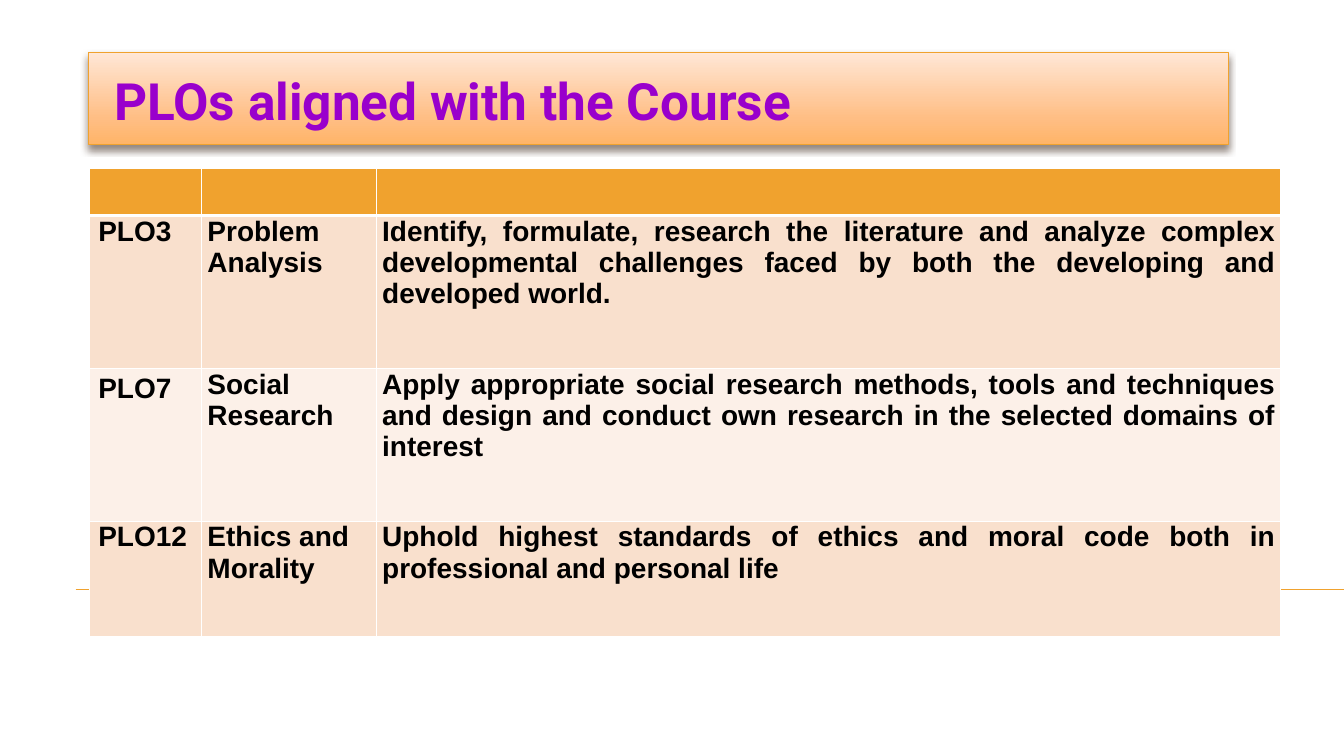
import pptx
import pptx.util
import pptx.dml.color
import pptx.enum.shapes
import pptx.enum.text
import pptx.oxml
from pptx.oxml.ns import nsdecls

Inches, Pt = pptx.util.Inches, pptx.util.Pt
ALIGN = pptx.enum.text.PP_ALIGN
ANCHOR = pptx.enum.text.MSO_ANCHOR
ORANGE = "F0A22E"


def rgb(color):
    return pptx.dml.color.RGBColor.from_string(color)


def xml(tag, attrs, inner=""):
    """Build one DrawingML element."""
    return pptx.oxml.parse_xml(f'<a:{tag} {nsdecls("a")} {attrs}>{inner}</a:{tag}>')


prs = pptx.Presentation()
prs.slide_width, prs.slide_height = Inches(16), Inches(9)
s = prs.slides.add_slide(prs.slide_layouts[6])

# Rule across the lower part of the slide
rule = s.shapes.add_connector(pptx.enum.shapes.MSO_CONNECTOR.STRAIGHT,
                              Inches(0.9), Inches(7.02), prs.slide_width, Inches(7.02))
rule.line.color.rgb = rgb(ORANGE)
rule.line.width = Pt(0.75)
rule._element.spPr.append(xml("effectLst", ""))

# Title banner with gradient and soft shadow
banner = s.shapes.add_shape(pptx.enum.shapes.MSO_SHAPE.RECTANGLE,
                            Inches(1.05), Inches(0.62), Inches(13.57), Inches(1.1))
banner.line.color.rgb = rgb(ORANGE)
banner.line.width = Pt(0.79)
stops = "".join(f'<a:gs pos="{share * 1000}"><a:srgbClr val="{color}"/></a:gs>'
                for share, color in [(0, "FFE7D7"), (72, "FFBE84"), (100, "FFB468")])
spPr = banner._element.spPr
spPr.insert(2, xml("gradFill", 'rotWithShape="1"',
                   f'<a:gsLst>{stops}</a:gsLst><a:lin ang="5400000" scaled="0"/>'))
spPr.append(xml("effectLst", "",
                f'<a:outerShdw blurRad="{Pt(6)}" dist="{Pt(4)}" dir="5400000" rotWithShape="0">'
                '<a:srgbClr val="4E3B30"><a:alpha val="60000"/></a:srgbClr></a:outerShdw>'))
tf = banner.text_frame
tf.word_wrap = True
tf.vertical_anchor = ANCHOR.MIDDLE
tf.margin_left, tf.margin_right = Inches(0.31), Inches(0.14)
tf.margin_top, tf.margin_bottom = Inches(0.12), Inches(0.07)
p = tf.paragraphs[0]
p.text = "PLOs aligned with the Course"
p.alignment = ALIGN.LEFT
p.font.name, p.font.size, p.font.bold = "Roboto", Pt(44), True
p.font.color.rgb = rgb("9900CC")

# Outcomes table
outcomes = [
    ("", "", ""),
    ("PLO3", "Problem Analysis",
     "Identify, formulate, research the literature and analyze complex developmental "
     "challenges faced by both the developing and developed world."),
    ("PLO7", "Social Research",
     "Apply appropriate social research methods, tools and techniques and design and "
     "conduct own research in the selected domains of interest"),
    ("PLO12", "Ethics and\nMorality",
     "Uphold highest standards of ethics and moral code both in professional and personal life"),
]
col_widths = [1.33, 2.08, 10.77]
row_heights = [0.57, 1.82, 1.82, 1.37]
row_fills = [ORANGE, "F9E0CD", "FCF0E8", "F9E0CD"]
table = s.shapes.add_table(len(row_heights), len(col_widths), Inches(1.07), Inches(2),
                           Inches(sum(col_widths)), Inches(sum(row_heights))).table
for column, width in zip(table.columns, col_widths):
    column.width = Inches(width)
for row, height in zip(table.rows, row_heights):
    row.height = Inches(height)

for r, texts in enumerate(outcomes):
    for c, text in enumerate(texts):
        cell = table.cell(r, c)
        cell.margin_left = Inches(0.1 if c == 0 else 0.07)
        cell.margin_right = Inches(0.07)
        cell.margin_top = cell.margin_bottom = Inches(0.05 if text == "PLO7" else 0)
        cell.text_frame.text = text
        for p in cell.text_frame.paragraphs:
            p.alignment = ALIGN.JUSTIFY
            p.font.name, p.font.size, p.font.bold = "Arial", Pt(24), True
            p.font.color.rgb = rgb("000000")
        cell.fill.solid()
        cell.fill.fore_color.rgb = rgb(row_fills[r])
        # Heavier line between the header and the first outcome
        heavy = {0: "lnB", 1: "lnT"}.get(r)
        for i, side in enumerate(["lnL", "lnR", "lnT", "lnB"]):
            width = Pt(3 if side == heavy else 1)
            cell._tc.get_or_add_tcPr().insert(i, xml(
                side, f'w="{width}"',
                '<a:solidFill><a:srgbClr val="FFFFFF"/></a:solidFill>'))

prs.save("out.pptx")
